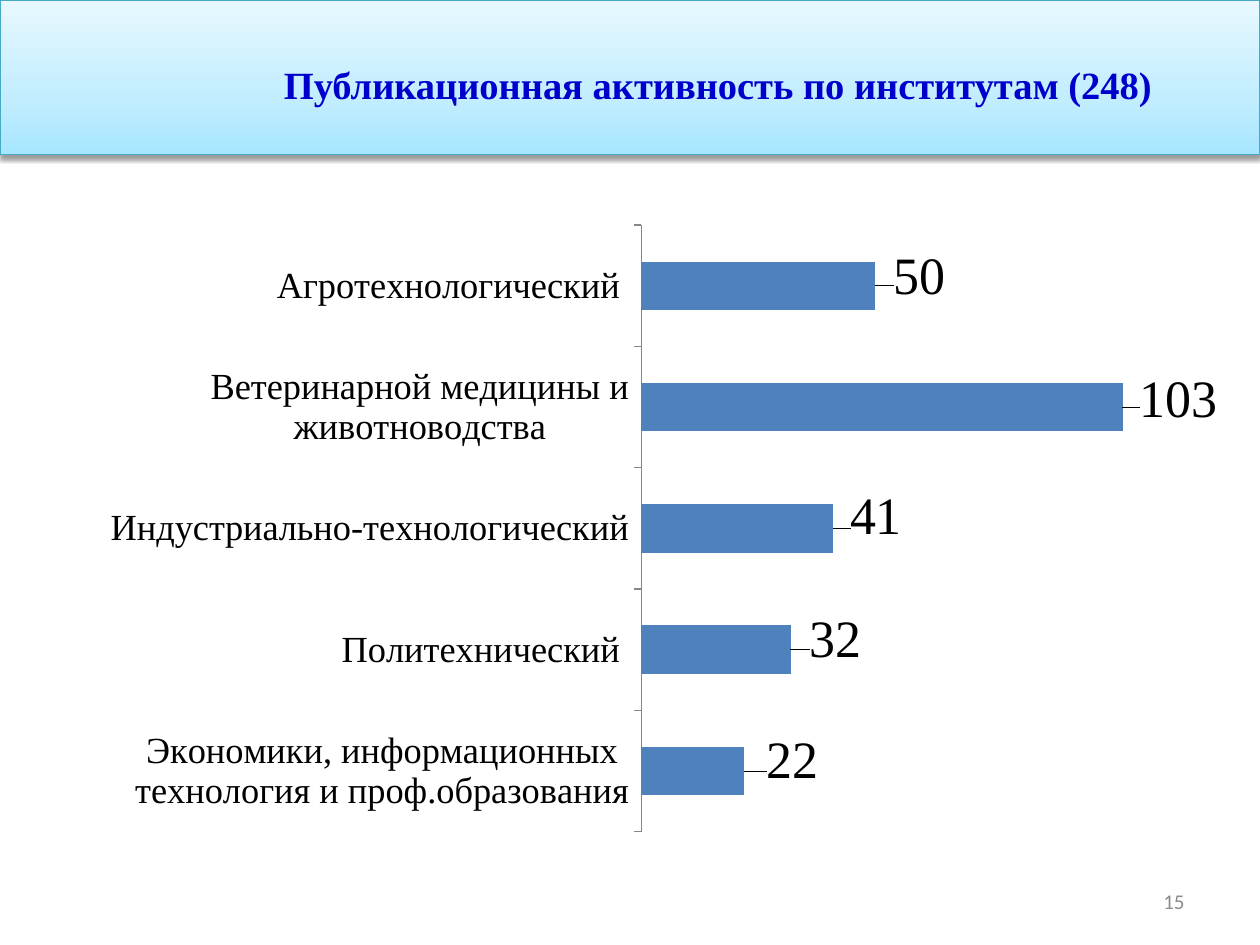
from copy import deepcopy
from dataclasses import dataclass

from pptx import Presentation
from pptx.chart.chart import Chart
from pptx.chart.data import CategoryChartData
from pptx.dml.color import RGBColor
from pptx.enum.chart import XL_CHART_TYPE, XL_LABEL_POSITION, XL_TICK_MARK
from pptx.enum.shapes import MSO_SHAPE
from pptx.enum.text import MSO_ANCHOR, PP_ALIGN
from pptx.oxml import parse_xml
from pptx.oxml.ns import nsdecls, qn
from pptx.slide import Slide
from pptx.text.text import Font, TextFrame
from pptx.util import Pt

SERIF = "Times New Roman"
SANS = "Calibri"
CHART_WIDTH, CHART_HEIGHT = 672, 363


@dataclass(frozen=True)
class Institute:
    """Shifts move the value label from its default place, in points."""
    name: str
    publications: int
    shift_x: float
    shift_y: float


INSTITUTES = [
    Institute("Экономики, информационных технология и проф.образования", 22, 10, -6),
    Institute("Политехнический ", 32, 8, -6),
    Institute("Индустриально-технологический", 41, 7, -7),
    Institute("Ветеринарной медицины и животноводства", 103, 7, -4),
    Institute("Агротехнологический ", 50, 8, -5),
]
BAND_STOPS = [(0, "A7E6FF"), (0.35, "C1EDFF"), (1, "E7F8FF")]


def color(value: str) -> RGBColor:
    return RGBColor.from_string(value)


def style(font: Font, name: str, size: float, fill: str, bold: bool = False) -> None:
    font.name, font.size, font.bold = name, Pt(size), bold
    font.color.rgb = color(fill)


def write_line(frame: TextFrame, text: str, align: PP_ALIGN, name: str,
               size: float, fill: str, bold: bool = False) -> None:
    frame.word_wrap = True
    para = frame.paragraphs[0]
    para.alignment = align
    span = para.add_run()
    span.text = text
    style(span.font, name, size, fill, bold)


def add_band(page: Slide) -> None:
    band = page.shapes.add_shape(MSO_SHAPE.RECTANGLE, 0, 0, Pt(720), Pt(88.5))
    band.line.color.rgb = color("46AAC5")
    band.line.width = Pt(0.75)
    band.fill.gradient()
    band.fill.gradient_angle = 90
    stop_list = next(band.element.iter(qn("a:gsLst")))
    stop_list.append(deepcopy(stop_list[0]))
    for stop, (position, fill) in zip(band.fill.gradient_stops, BAND_STOPS):
        stop.position = position
        stop.color.rgb = color(fill)
    band.shadow.inherit = False
    next(band.element.iter(qn("a:effectLst"))).append(parse_xml(
        f'<a:outerShdw {nsdecls("a")} blurRad="{Pt(3.1)}" dist="{Pt(1.6)}" '
        'dir="5400000" rotWithShape="0"><a:srgbClr val="000000">'
        '<a:alpha val="38000"/></a:srgbClr></a:outerShdw>'))
    page.shapes.title.element.addprevious(band.element)


def add_title(page: Slide, text: str) -> None:
    title = page.shapes.title
    title.left, title.top, title.width, title.height = Pt(111), Pt(31), Pt(609), Pt(34)
    frame = title.text_frame
    frame.vertical_anchor = MSO_ANCHOR.TOP
    frame.margin_right = Pt(18)
    write_line(frame, text, PP_ALIGN.CENTER, SERIF, 22, "0000CC", True)


def manual_layout(**values: float):
    tags = "".join(f'<c:{tag} val="{value}"/>' for tag, value in values.items())
    return parse_xml(f'<c:layout {nsdecls("c")}><c:manualLayout>{tags}'
                     '</c:manualLayout></c:layout>')


def place_plot(chart: Chart) -> None:
    plot_area = next(chart.element.iter(qn("c:plotArea")))
    for layout in plot_area.findall(qn("c:layout")):
        plot_area.remove(layout)
    plot_area.insert(0, manual_layout(
        layoutTarget="inner", xMode="edge", yMode="edge",
        x=0.515, y=0.017, w=0.482, h=0.955))


def add_value_labels(chart: Chart) -> None:
    series = chart.plots[0].series[0]
    for index in range(len(INSTITUTES)):
        label = series.points[index].data_label
        style(label.font, SERIF, 30, "000000")
        label.position = XL_LABEL_POSITION.OUTSIDE_END
    for label, institute in zip(chart.element.iter(qn("c:dLbl")), INSTITUTES):
        label.insert(1, manual_layout(x=institute.shift_x / CHART_WIDTH,
                                      y=institute.shift_y / CHART_HEIGHT))


def add_publication_chart(page: Slide) -> None:
    data = CategoryChartData()
    data.categories = [institute.name for institute in INSTITUTES]
    data.add_series("Series 1", [institute.publications for institute in INSTITUTES])
    chart = page.shapes.add_chart(
        XL_CHART_TYPE.BAR_CLUSTERED, Pt(24), Pt(122.5),
        Pt(CHART_WIDTH), Pt(CHART_HEIGHT), data).chart
    chart.has_title = chart.has_legend = False
    style(chart.font, SANS, 10, "000000")

    names = chart.category_axis
    names.major_tick_mark = XL_TICK_MARK.OUTSIDE
    names.format.line.color.rgb = color("868686")
    style(names.tick_labels.font, SERIF, 21, "000000")
    values = chart.value_axis
    values.visible = values.has_major_gridlines = False
    values.minimum_scale, values.maximum_scale = 0, 120

    plot = chart.plots[0]
    plot.gap_width = 150
    plot.vary_by_categories = False
    bars = plot.series[0].format.fill
    bars.solid()
    bars.fore_color.rgb = color("4F81BD")
    add_value_labels(chart)
    place_plot(chart)


def add_page_number(page: Slide, number: str) -> None:
    box = page.shapes.add_textbox(Pt(516), Pt(500.5), Pt(168), Pt(28.75))
    box.text_frame.vertical_anchor = MSO_ANCHOR.MIDDLE
    write_line(box.text_frame, number, PP_ALIGN.RIGHT, SANS, 12, "8C8C8C")


def main() -> None:
    deck = Presentation()
    deck.slide_width, deck.slide_height = Pt(720), Pt(540)
    page = deck.slides.add_slide(deck.slide_layouts[5])
    add_band(page)
    add_title(page, "Публикационная активность по институтам (248)")
    add_publication_chart(page)
    add_page_number(page, "15")
    deck.save("out.pptx")


if __name__ == "__main__":
    main()
